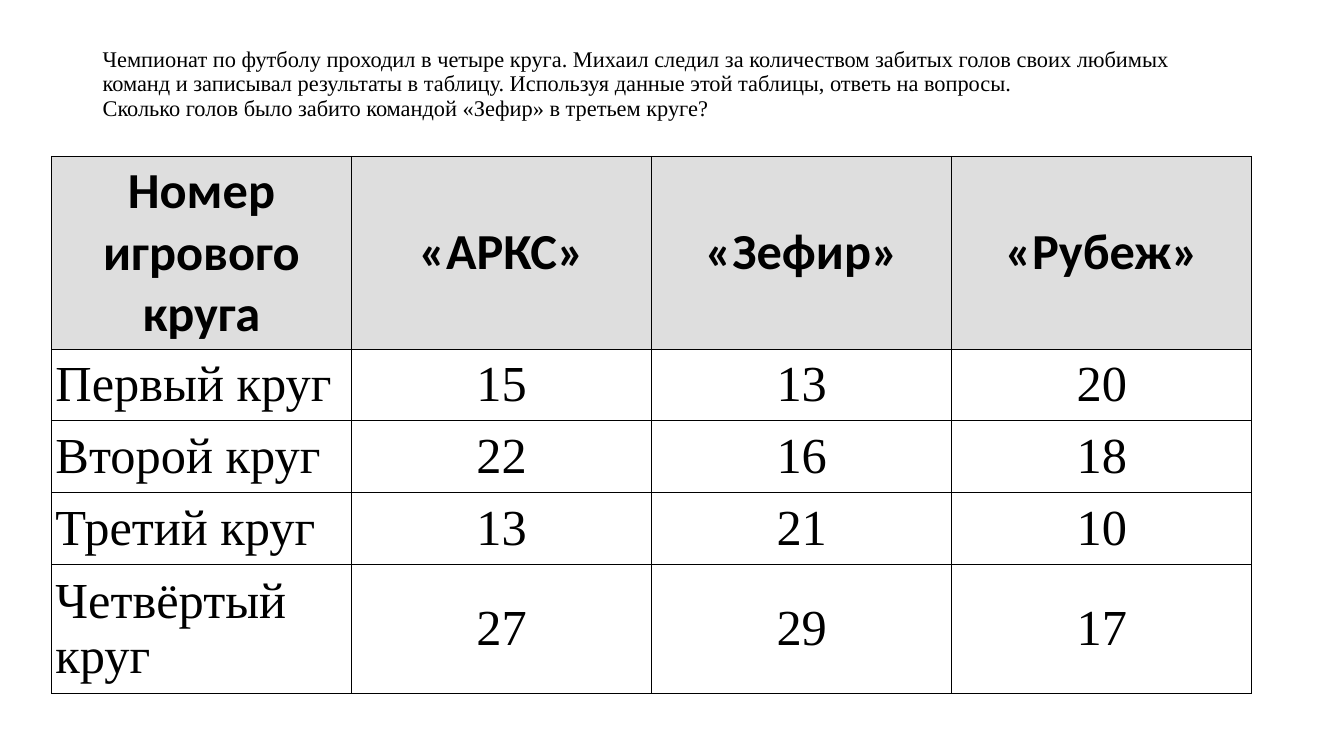
from lxml.etree import SubElement
from pptx import Presentation
from pptx.dml.color import RGBColor
from pptx.enum.text import MSO_ANCHOR, PP_ALIGN
from pptx.oxml.ns import qn
from pptx.util import Inches, Pt

TASK = (
    "Чемпионат по футболу проходил в четыре кругa. Михаил следил за количеством "
    "забитых голов своих любимых команд и записывал результаты в таблицу. "
    "Используя данные этой таблицы, ответь на вопросы.\v"
    "Сколько голов было забито командой «Зефир» в третьем круге?"
)
GOALS = [
    ("Номер игрового круга", "«АРКС»", "«Зефир»", "«Рубеж»"),
    ("Первый круг", 15, 13, 20),
    ("Второй круг", 22, 16, 18),
    ("Третий круг", 13, 21, 10),
    ("Четвёртый круг", 27, 29, 17),
]


def color(hex_code):
    return RGBColor.from_string(hex_code)


class SlideBuilder:
    """Style and current slide; lengths are columns and rows of a 100 x 100 grid."""

    ink, header_fill, body_fill = "000000", "DEDEDE", "FFFFFF"
    header_font, body_font = "Calibri", "Times New Roman"
    task_size, table_size = 16, 36
    border_width, cell_margin = Pt(0.75), Inches(0.04)

    def __init__(self, deck):
        self.page = deck.slides.add_slide(deck.slide_layouts[6])
        self.column = deck.slide_width / 100
        self.row = deck.slide_height / 100

    def place(self, left, top, width, height):
        return (int(left * self.column), int(top * self.row),
                int(width * self.column), int(height * self.row))

    def format_text(self, para, font, size, bold=False):
        for span in para.runs:
            span.font.name = font
            span.font.size = Pt(size)
            span.font.bold = bold
            span.font.color.rgb = color(self.ink)

    def add_text(self, text, *area):
        box = self.page.shapes.add_textbox(*self.place(*area))
        frame = box.text_frame
        frame.word_wrap = True
        frame.vertical_anchor = MSO_ANCHOR.MIDDLE
        frame.text = text
        para = frame.paragraphs[0]
        para.line_spacing = 0.9
        self.format_text(para, self.body_font, self.task_size)

    def add_table(self, rows, left, top, column_width, row_heights):
        count = len(rows[0])
        area = self.place(left, top, column_width * count, sum(row_heights))
        table = self.page.shapes.add_table(len(rows), count, *area).table
        for table_column in table.columns:
            table_column.width = int(column_width * self.column)
        for index, (values, height) in enumerate(zip(rows, row_heights)):
            table.rows[index].height = int(height * self.row)
            for position, value in enumerate(values):
                centered = index == 0 or position > 0
                self.fill_cell(table.cell(index, position), str(value), index == 0, centered)

    def fill_cell(self, cell, text, header, centered):
        cell.text = text
        cell.vertical_anchor = MSO_ANCHOR.MIDDLE
        cell.margin_left = cell.margin_right = self.cell_margin
        cell.margin_top = cell.margin_bottom = self.cell_margin
        para = cell.text_frame.paragraphs[0]
        para.alignment = PP_ALIGN.CENTER if centered else PP_ALIGN.LEFT
        font = self.header_font if header else self.body_font
        self.format_text(para, font, self.table_size, header)
        # Borders come before the fill in the cell properties
        self.add_borders(cell)
        cell.fill.solid()
        cell.fill.fore_color.rgb = color(self.header_fill if header else self.body_fill)

    def add_borders(self, cell):
        properties = cell._tc.get_or_add_tcPr()
        for side in ("a:lnL", "a:lnR", "a:lnT", "a:lnB"):
            line = SubElement(properties, qn(side), w=str(self.border_width))
            fill = SubElement(line, qn("a:solidFill"))
            SubElement(fill, qn("a:srgbClr"), val=self.ink)


def main():
    deck = Presentation()
    deck.slide_width, deck.slide_height = Inches(13.33), Inches(7.5)
    builder = SlideBuilder(deck)

    # Task text
    builder.add_text(TASK, 6.9, 5.33, 86.25, 11.75)

    # Goals by round and team
    builder.add_table(GOALS, 3.83, 20.67, 22.33, [25.5, 9.5, 9.5, 9.5, 15.9])

    deck.save("out.pptx")


if __name__ == "__main__":
    main()
